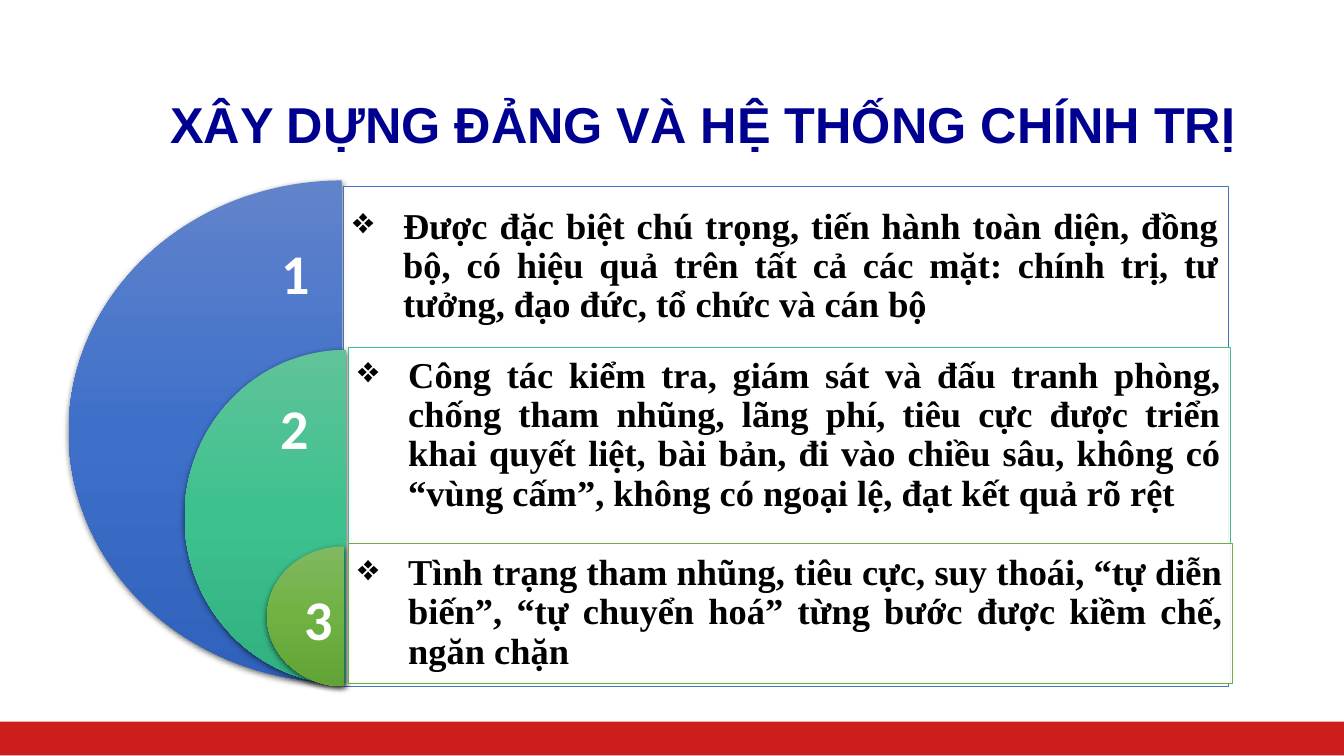
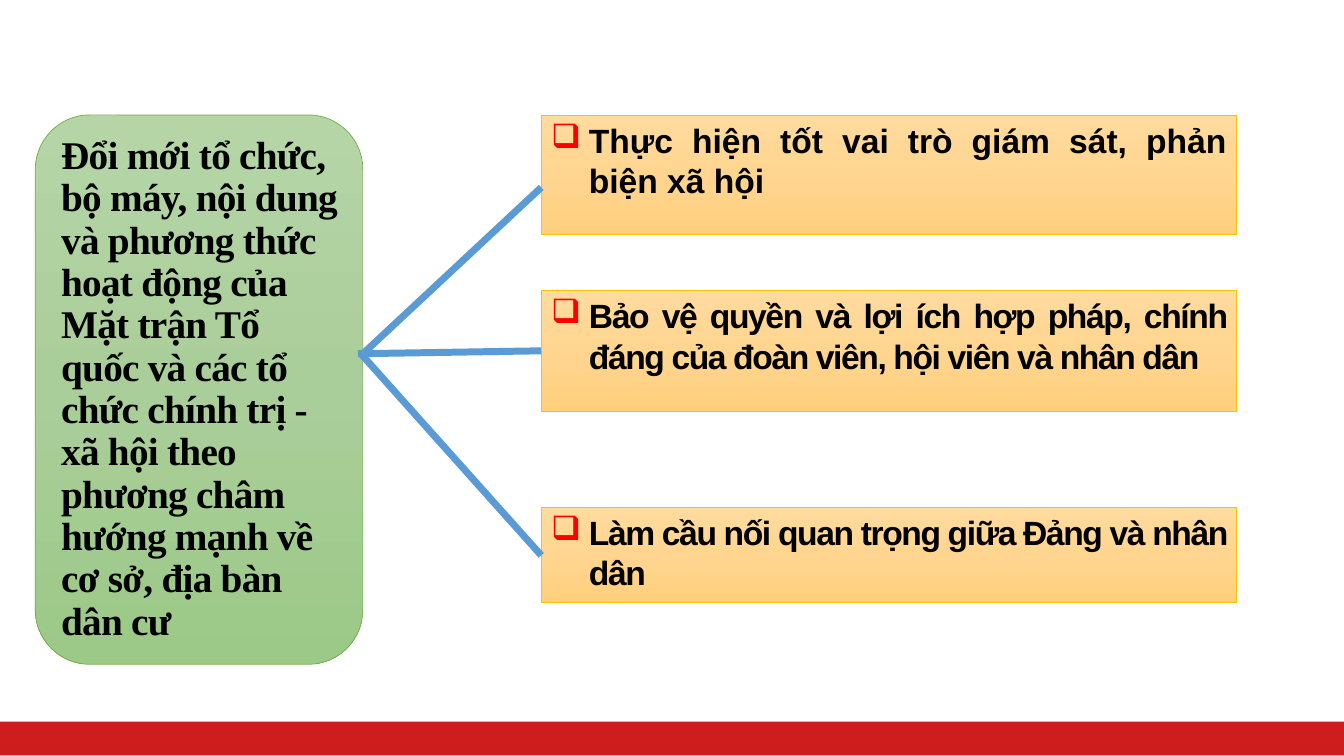
from lxml import etree
from pptx import Presentation
from pptx.dml.color import RGBColor
from pptx.enum import shapes, text
from pptx.oxml.ns import qn
from pptx.util import Pt

COLORS = {
    "band": "CD1D1D", "title": "000090", "ink": "000000", "white": "FFFFFF",
    "bullet": "FF0000", "link": "5B9BD5", "task_line": "FFC000", "root_line": "70AD47",
}
GRADIENTS = {
    "blue": ("6183CB", "3E70CA", "3062BB"),
    "teal": ("60C39A", "3DC18E", "31B180"),
    "green": ("81B861", "6FB242", "62A336"),
    "orange": ("FFDB9E", "FFD590", "FFD07C"),
    "pale_green": ("B5D5A7", "AACE9A", "9CC987"),
}
SERIF, SANS, DIGIT = "Times New Roman", "Arial", "Calibri"
TOP, MIDDLE = text.MSO_ANCHOR.TOP, text.MSO_ANCHOR.MIDDLE
LEFT, JUSTIFY = text.PP_ALIGN.LEFT, text.PP_ALIGN.JUSTIFY
SHAPE = shapes.MSO_SHAPE

TITLE = "XÂY DỰNG ĐẢNG VÀ HỆ THỐNG CHÍNH TRỊ"
POINTS = [
    {"text": "Được đặc biệt chú trọng, tiến hành toàn diện, đồng bộ, có hiệu quả trên tất cả "
             "các mặt: chính trị, tư tưởng, đạo đức, tổ chức và cán bộ",
     "gradient": "blue", "line": "4472C4", "anchor": MIDDLE, "bottom": 249,
     "pie": (49, 128.9, 390.2, 358.6), "panel": (245.5, 133.2, 632.2, 357.1),
     "number": (193.7, 167)},
    {"text": "Công tác kiểm tra, giám sát và đấu tranh phòng, chống tham nhũng, lãng phí, "
             "tiêu cực được triển khai quyết liệt, bài bản, đi vào chiều sâu, không có "
             "“vùng cấm”, không có ngoại lệ, đạt kết quả rõ rệt",
     "gradient": "teal", "line": "43BB8D", "anchor": TOP, "bottom": 128,
     "pie": (131.8, 249.8, 231.1, 239), "panel": (249.1, 248.4, 630, 239),
     "number": (193, 277.9)},
    {"text": "Tình trạng tham nhũng, tiêu cực, suy thoái, “tự diễn biến”, “tự chuyển hoá” "
             "từng bước được kiềm chế, ngăn chặn",
     "gradient": "green", "line": "70AD47", "anchor": MIDDLE, "bottom": 6.5,
     "pie": (190.8, 390.2, 110.2, 100.1), "panel": (249.1, 388.1, 631.4, 99.7),
     "number": (210.2, 414)},
]
ROOT = ("Đổi mới tổ chức, bộ máy, nội dung và phương thức hoạt động của Mặt trận Tổ quốc và "
        "các tổ chức chính trị - xã hội theo phương châm hướng mạnh về cơ sở, địa bàn dân cư")
TASKS = [
    {"text": "Thực hiện tốt vai trò giám sát, phản biện xã hội",
     "top": 82.1, "height": 85, "spacing": 0, "link": (259.2, 133.9)},
    {"text": "Bảo vệ quyền và lợi ích hợp pháp, chính đáng của đoàn viên, hội viên và nhân dân",
     "top": 207.4, "height": 86.4, "spacing": -1, "link": (255.6, 250.6)},
    {"text": "Làm cầu nối quan trọng giữa Đảng và nhân dân",
     "top": 362.2, "height": 68.4, "spacing": -1, "link": (257.8, 396.7)},
]
TASK_LEFT, TASK_WIDTH, LINK_TOP = 386.6, 496.8, 252.7


def rgb(value):
    return RGBColor.from_string(value)


def points(*values):
    return [Pt(value) for value in values]


def add_child(parent, tag, **attributes):
    child = etree.SubElement(parent, qn(tag))
    for name, value in attributes.items():
        child.set(name, str(value))
    return child


def write(shape, content, *, size, font=SANS, color="ink", align=LEFT, anchor=TOP,
          leading=None, spacing=0, bullet=None, bullet_color=None, indent=0, insets=None):
    frame = shape.text_frame
    frame.word_wrap = True
    frame.auto_size = text.MSO_AUTO_SIZE.NONE
    frame.vertical_anchor = anchor
    if insets:
        (frame.margin_left, frame.margin_top,
         frame.margin_right, frame.margin_bottom) = points(*insets)
    paragraph = frame.paragraphs[0]
    if bullet:
        properties = paragraph._p.get_or_add_pPr()
        properties.set("marL", str(Pt(indent)))
        properties.set("indent", str(-Pt(indent)))
        if bullet_color:
            add_child(add_child(properties, "a:buClr"), "a:srgbClr", val=COLORS[bullet_color])
        add_child(properties, "a:buChar", char=bullet)
    paragraph.alignment = align
    if leading:
        paragraph.line_spacing = leading
    run = paragraph.add_run()
    run.text = content
    run.font.name, run.font.size, run.font.bold = font, Pt(size), True
    run.font.color.rgb = rgb(COLORS[color])
    if spacing:
        run._r.get_or_add_rPr().set("spc", str(int(spacing * 100)))


def fill_gradient(shape, stops):
    shape.fill.background()
    blank = shape._element.spPr.find(qn("a:noFill"))
    gradient = etree.Element(qn("a:gradFill"), rotWithShape="1")
    stop_list = add_child(gradient, "a:gsLst")
    for position, color in zip((0, 50000, 100000), stops):
        add_child(add_child(stop_list, "a:gs", pos=position), "a:srgbClr", val=color)
    add_child(gradient, "a:lin", ang=5400000, scaled=0)
    blank.getparent().replace(blank, gradient)


def add_box(slide, kind, bounds, *, fill=None, gradient=None, opacity=None, line=None):
    shape = slide.shapes.add_shape(kind, *points(*bounds))
    shape.shadow.inherit = False
    if gradient:
        fill_gradient(shape, GRADIENTS[gradient])
    else:
        shape.fill.solid()
        shape.fill.fore_color.rgb = rgb(fill)
    if opacity:
        color = shape._element.spPr.find(qn("a:solidFill")).find(qn("a:srgbClr"))
        add_child(color, "a:alpha", val=opacity * 1000)
    if line:
        shape.line.color.rgb = rgb(line)
        shape.line.width = Pt(0.5)
    else:
        shape.line.fill.background()
    return shape


def add_half_disc(slide, bounds, gradient):
    disc = add_box(slide, SHAPE.PIE, bounds, gradient=gradient)
    disc.adjustments[0], disc.adjustments[1] = 54, 162
    effects = disc._element.spPr.find(qn("a:effectLst"))
    shadow = add_child(effects, "a:outerShdw", blurRad=Pt(4.5), dist=Pt(1.5),
                       dir=5400000, algn="ctr", rotWithShape=0)
    add_child(add_child(shadow, "a:srgbClr", val=COLORS["ink"]), "a:alpha", val=63000)


def add_link(slide, start, end):
    link = slide.shapes.add_connector(shapes.MSO_CONNECTOR.STRAIGHT, *points(*start, *end))
    link.line.color.rgb = rgb(COLORS["link"])
    link.line.width = Pt(5)
    add_child(link._element.spPr, "a:effectLst")


def add_master_band(presentation, slide):
    band = add_box(slide, SHAPE.RECTANGLE, (0, 515.5, 960, 24), fill=COLORS["band"])
    presentation.slide_master.shapes._spTree.insert(2, band._element)


def build_points(slide):
    title = slide.shapes.title
    title.left, title.top, title.width, title.height = points(114.5, 52.6, 834.5, 76.3)
    write(title, TITLE, size=36, color="title", anchor=MIDDLE, leading=0.9)
    for number, point in enumerate(POINTS, 1):
        add_half_disc(slide, point["pie"], point["gradient"])
        panel = add_box(slide, SHAPE.RECTANGLE, point["panel"], fill=COLORS["white"],
                        opacity=90, line=point["line"])
        write(panel, point["text"], size=26, font=SERIF, align=JUSTIFY, leading=0.9,
              anchor=point["anchor"], bullet="❖", indent=36,
              insets=(6.5, 6.5, 6.5, point["bottom"]))
        label = slide.shapes.add_textbox(*points(*point["number"], 38.2, 55.4))
        write(label, str(number), size=40, font=DIGIT, color="white")


def build_tasks(slide):
    root = add_box(slide, SHAPE.ROUNDED_RECTANGLE, (25.2, 82.1, 234, 392.4),
                   gradient="pale_green", line=COLORS["root_line"])
    write(root, ROOT, size=28, font=SERIF, anchor=MIDDLE, leading=0.9, spacing=-0.5)
    for task in TASKS:
        box = add_box(slide, SHAPE.RECTANGLE,
                      (TASK_LEFT, task["top"], TASK_WIDTH, task["height"]),
                      gradient="orange", line=COLORS["task_line"])
        write(box, task["text"], size=24, align=JUSTIFY, spacing=task["spacing"],
              bullet="❑", bullet_color="bullet", indent=27)
        start_left, end_top = task["link"]
        add_link(slide, (start_left, LINK_TOP), (TASK_LEFT, end_top))


def main():
    presentation = Presentation()
    presentation.slide_width, presentation.slide_height = points(960, 540)
    title_only, blank = presentation.slide_layouts[5], presentation.slide_layouts[6]
    points_slide = presentation.slides.add_slide(title_only)
    add_master_band(presentation, points_slide)
    build_points(points_slide)
    build_tasks(presentation.slides.add_slide(blank))
    presentation.save("out.pptx")


if __name__ == "__main__":
    main()
